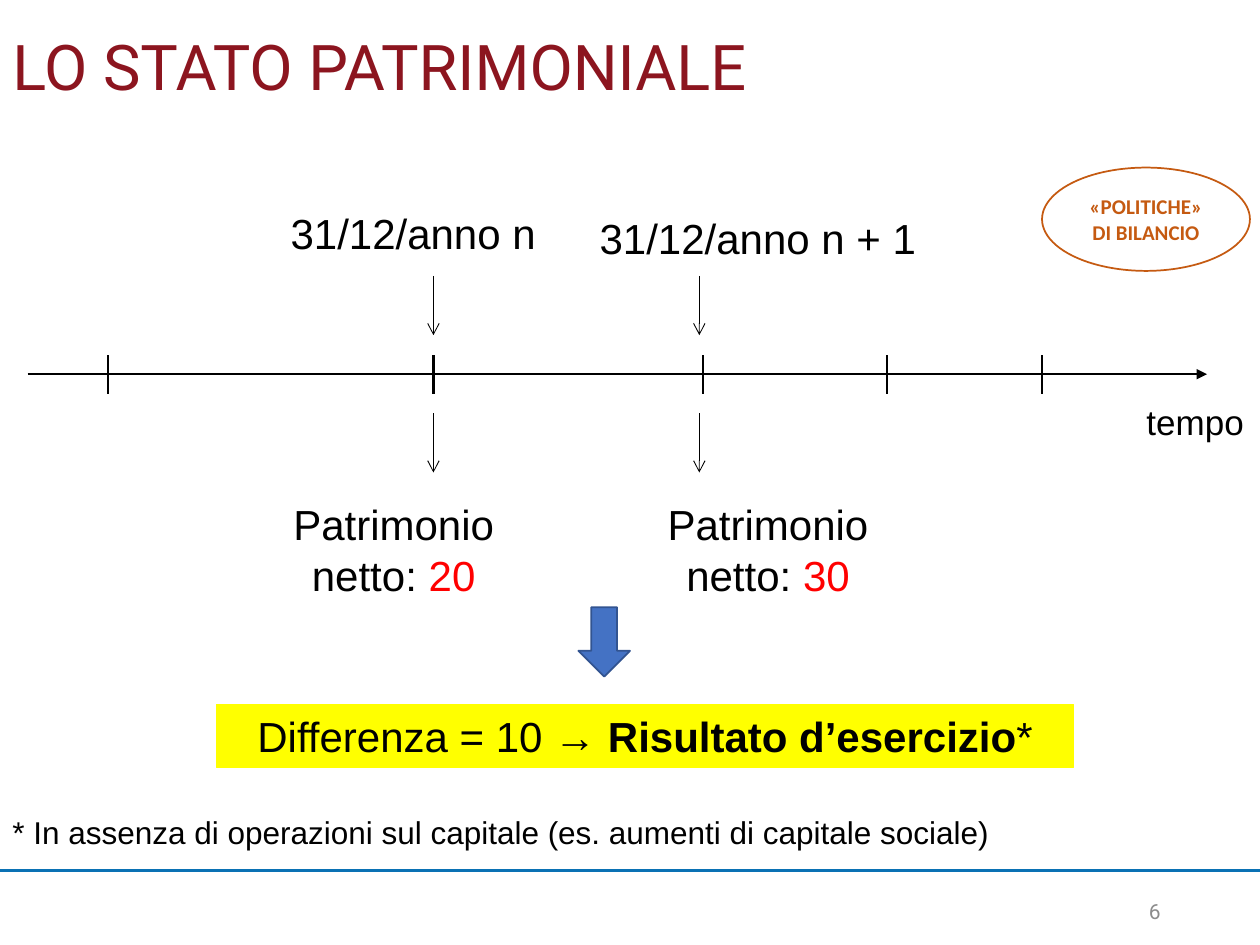
from pptx import Presentation
from pptx.dml.color import RGBColor
from pptx.enum.shapes import MSO_CONNECTOR, MSO_SHAPE
from pptx.enum.text import MSO_ANCHOR, PP_ALIGN
from pptx.oxml.ns import qn
from pptx.util import Inches, Pt
from lxml import etree

STRAIGHT = MSO_CONNECTOR.STRAIGHT
RECTANGLE, ELLIPSE, DOWN_ARROW = MSO_SHAPE.RECTANGLE, MSO_SHAPE.OVAL, MSO_SHAPE.DOWN_ARROW
TOP, MIDDLE = MSO_ANCHOR.TOP, MSO_ANCHOR.MIDDLE
LEFT, CENTER, RIGHT = PP_ALIGN.LEFT, PP_ALIGN.CENTER, PP_ALIGN.RIGHT

COLORS = {
    "black": "000000",
    "title": "8C151F",
    "rule": "0A71B4",
    "value": "FF0000",
    "highlight": "FFFF00",
    "arrow": "4472C4",
    "arrow_edge": "325491",
    "policy": "C55A11",
    "number": "8C8C8C",
}


def rgb(name):
    return RGBColor.from_string(COLORS[name])


class TimelineSlide:
    """Holds the slide and its text style, and draws each kind of element."""

    def __init__(self, page, font="Arial", size=24):
        self.page = page
        self.font = font
        self.size = size

    def label(self, shape, spans, size=None, font=None, color="black",
              align=CENTER, anchor=TOP, wrap=True):
        frame = shape.text_frame
        frame.word_wrap = wrap
        frame.vertical_anchor = anchor
        para = frame.paragraphs[0]
        para.alignment = align
        for text, span_color, bold in spans:
            span = para.add_run()
            span.text = text
            span.font.name = font or self.font
            span.font.size = Pt(size or self.size)
            span.font.bold = bold
            span.font.color.rgb = rgb(span_color or color)
        return para

    def text(self, left, top, width, height, *spans, **style):
        box = self.page.shapes.add_textbox(
            Inches(left), Inches(top), Inches(width), Inches(height))
        return self.label(box, spans, **style)

    def shape(self, kind, left, top, width, height, fill, edge, weight):
        shape = self.page.shapes.add_shape(
            kind, Inches(left), Inches(top), Inches(width), Inches(height))
        shape.shadow.inherit = False
        if fill:
            shape.fill.solid()
            shape.fill.fore_color.rgb = rgb(fill)
        else:
            shape.fill.background()
        shape.line.color.rgb = rgb(edge)
        shape.line.width = Pt(weight)
        return shape

    def line(self, x1, y1, x2, y2, weight, color="black", head=None):
        line = self.page.shapes.add_connector(
            STRAIGHT, Inches(x1), Inches(y1), Inches(x2), Inches(y2))
        line.line.color.rgb = rgb(color)
        line.line.width = Pt(weight)
        properties = line._element.spPr
        if head:
            etree.SubElement(properties.find(qn("a:ln")), qn("a:tailEnd"), type=head)
        etree.SubElement(properties, qn("a:effectLst"))


def main():
    deck = Presentation()
    deck.slide_width, deck.slide_height = Inches(10), Inches(7.5)
    slide = TimelineSlide(deck.slides.add_slide(deck.slide_layouts[6]))

    slide.line(0, 6.91, 10, 6.91, 1.5, "rule")
    title = slide.text(0, 0, 10, 1.11, ("LO STATO PATRIMONIALE", None, False),
                       size=36, font="Roboto", color="title", align=LEFT, anchor=MIDDLE)
    title.line_spacing = 0.9

    slide.line(0.22, 2.97, 9.58, 2.97, 1.25, head="triangle")
    for x in (0.86, 3.44, 5.58, 7.04, 8.27):
        slide.line(x, 2.82, x, 3.13, 1.25)
    slide.text(9, 3.13, 0.98, 0.44, ("tempo", None, False),
               size=20, align=LEFT, wrap=False)

    for x in (3.44, 5.55):
        for y in (2.19, 3.28):
            slide.line(x, y, x, y + 0.47, 0.5, head="arrow")

    slide.text(2.11, 1.6, 2.34, 0.5, ("31/12/anno n", None, False))
    slide.text(4.61, 1.64, 2.81, 0.5, ("31/12/anno n + 1", None, False))
    for left, width, value in ((2.11, 2.03, "20"), (5, 2.19, "30")):
        slide.text(left, 3.91, width, 0.91,
                   ("Patrimonio netto: ", None, False), (value, "value", False))

    slide.shape(DOWN_ARROW, 4.59, 4.82, 0.41, 0.55, "arrow", "arrow_edge", 1)
    result = slide.shape(RECTANGLE, 1.72, 5.59, 6.8, 0.5, "highlight", "highlight", 0.75)
    slide.label(result, [("Differenza = 10 → ", None, False),
                         ("Risultato d’esercizio", None, True),
                         ("*", None, False)])
    slide.text(0, 6.4, 8.44, 0.4,
               ("* In assenza di operazioni sul capitale (es. aumenti di capitale sociale)",
                None, False), size=18, align=LEFT)

    policy = slide.shape(ELLIPSE, 8.27, 1.33, 1.65, 0.82, None, "policy", 1)
    slide.label(policy, [("«POLITICHE» DI BILANCIO", None, True)],
                size=12, font="Calibri", color="policy", anchor=MIDDLE)
    slide.text(7.06, 7.03, 2.25, 0.4, ("6", None, False), size=12,
               font="Roboto", color="number", align=RIGHT, anchor=MIDDLE)

    deck.save("out.pptx")


if __name__ == "__main__":
    main()
